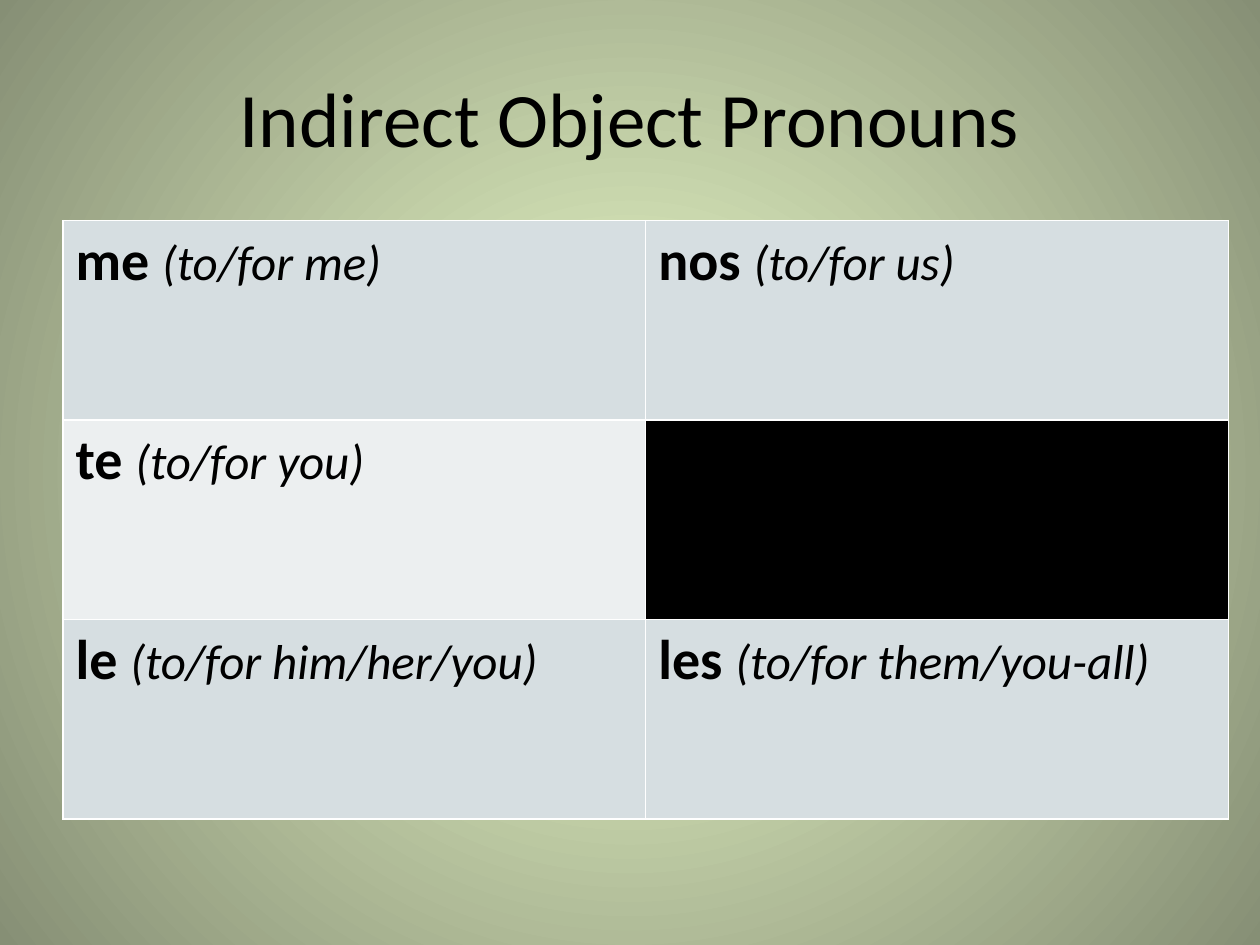
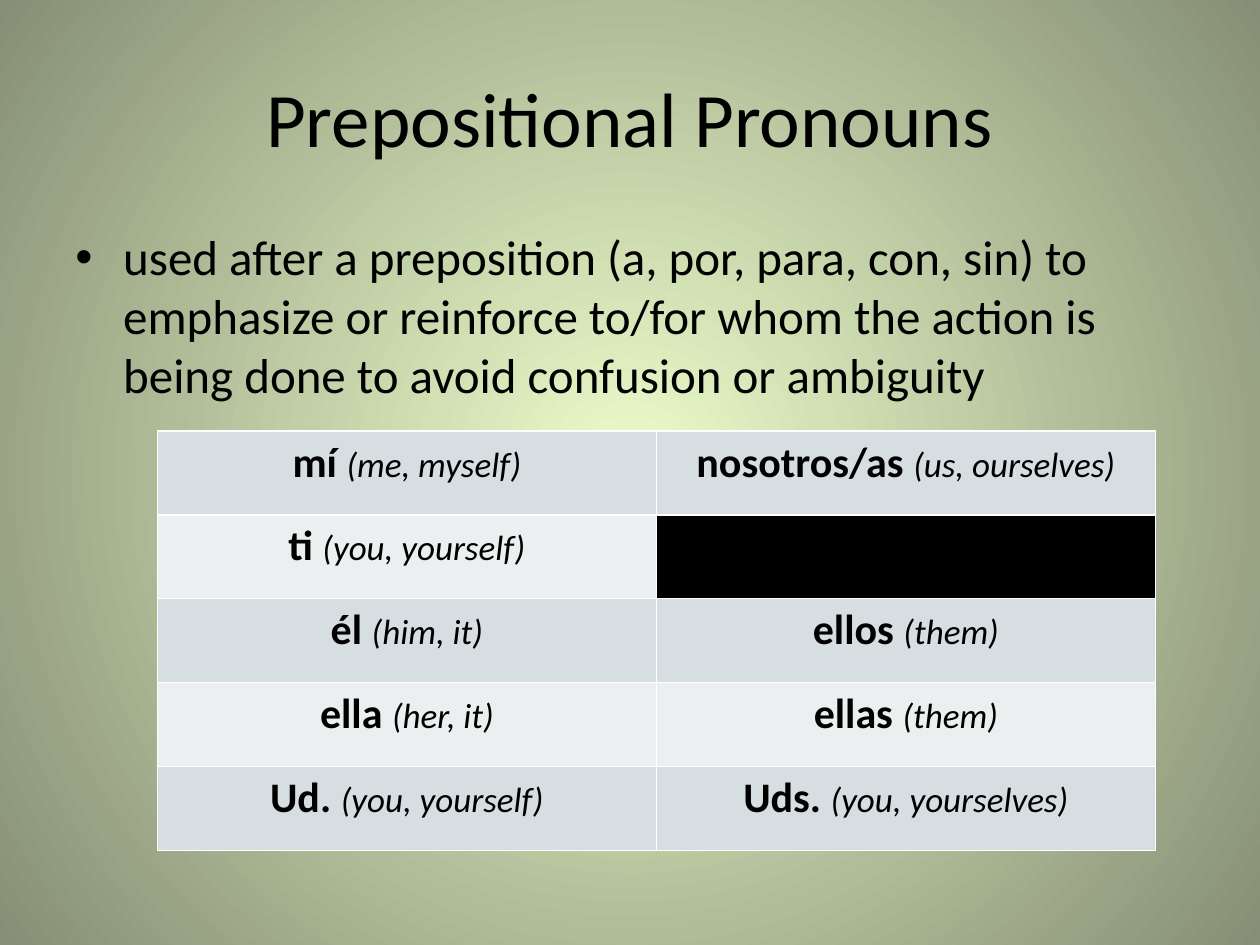
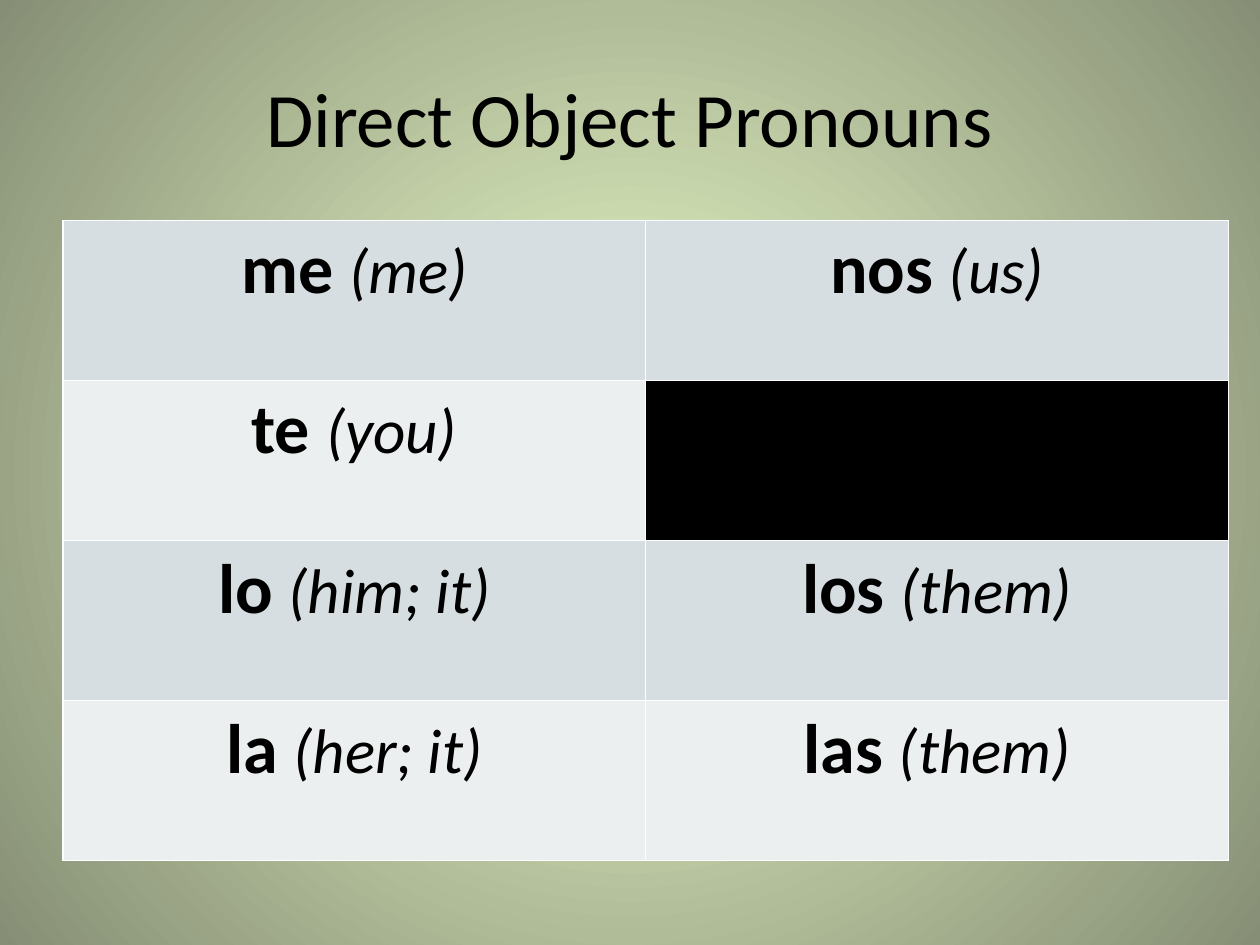
from dataclasses import dataclass

from lxml.etree import SubElement
from pptx import Presentation
from pptx.dml.color import RGBColor
from pptx.enum.text import MSO_ANCHOR as Anchor, PP_ALIGN as Align
from pptx.oxml.ns import qn
from pptx.util import Inches, Pt


@dataclass(frozen=True)
class Theme:
    font: str = "Calibri"
    text: str = "000000"
    glow: str = "ECFCCA"
    edge: str = "868F75"
    bands: tuple = ("D6DEE1", "ECEFF0")
    blocked: str = "000000"
    border: str = "FFFFFF"
    border_width: float = 1
    title_size: int = 44
    body_size: int = 28
    meaning_step: int = 4  # meanings are this much smaller than pronouns


THEME = Theme()
BLANK_LAYOUT = 6

# Each cell is (pronoun, meaning); None is a blocked-out cell
INDIRECT = [
    [("me", "to/for me"), ("nos", "to/for us")],
    [("te", "to/for you"), None],
    [("le", "to/for him/her/you"), ("les", "to/for them/you-all")],
]
PREPOSITIONAL = [
    [("mí", "me, myself"), ("nosotros/as", "us, ourselves")],
    [("ti", "you, yourself"), None],
    [("él", "him, it"), ("ellos", "them")],
    [("ella", "her, it"), ("ellas", "them")],
    [("Ud.", "you, yourself"), ("Uds.", "you, yourselves")],
]
DIRECT = [
    [("me", "me"), ("nos", "us")],
    [("te", "you"), None],
    [("lo", "him; it"), ("los", "them")],
    [("la", "her; it"), ("las", "them")],
]
USAGE = (
    "used after a preposition (a, por, para, con, sin) to emphasize or reinforce "
    "to/for whom the action is being done to avoid confusion or ambiguity"
)


def set_background(master):
    """Give every slide the radial gradient."""
    fill = master.background.fill
    fill.gradient()
    for stop, color in zip(fill.gradient_stops, (THEME.glow, THEME.edge)):
        stop.color.rgb = RGBColor.from_string(color)
    gradient = master.element.find(".//" + qn("a:gradFill"))
    gradient.remove(gradient.find(qn("a:lin")))
    circle = SubElement(gradient, qn("a:path"), path="circle")
    SubElement(circle, qn("a:fillToRect"), l="50000", t="50000", r="50000", b="50000")


def format_run(run, size, bold=False, italic=False):
    font = run.font
    font.name, font.size = THEME.font, Pt(size)
    font.bold, font.italic = bold, italic
    font.color.rgb = RGBColor.from_string(THEME.text)


def add_text(slide, text, box, size, anchor=Anchor.TOP):
    text_frame = slide.shapes.add_textbox(*map(Inches, box)).text_frame
    text_frame.word_wrap = True
    text_frame.vertical_anchor = anchor
    text_frame.text = text
    paragraph = text_frame.paragraphs[0]
    format_run(paragraph.runs[0], size)
    return paragraph


def add_titled_slide(presentation, title):
    slide = presentation.slides.add_slide(presentation.slide_layouts[BLANK_LAYOUT])
    paragraph = add_text(slide, title, (0.5, 0.3, 9, 1.25), THEME.title_size, Anchor.MIDDLE)
    paragraph.alignment = Align.CENTER
    return slide


def add_bullet(slide, text, box):
    paragraph = add_text(slide, text, box, THEME.body_size)
    paragraph.space_before = Pt(0.2 * THEME.body_size)
    properties = paragraph._p.get_or_add_pPr()
    indent = Inches(0.38)
    properties.set("marL", str(indent))
    properties.set("indent", str(-indent))
    SubElement(properties, qn("a:buFont"), typeface="Arial")
    SubElement(properties, qn("a:buChar"), char="•")


def set_borders(cell):
    properties = cell._tc.get_or_add_tcPr()
    for side in ("lnL", "lnR", "lnT", "lnB"):
        line = SubElement(properties, qn(f"a:{side}"), w=str(Pt(THEME.border_width)))
        SubElement(SubElement(line, qn("a:solidFill")), qn("a:srgbClr"), val=THEME.border)


def fill_cell(cell, entry, band, size, alignment):
    set_borders(cell)
    cell.fill.solid()
    cell.fill.fore_color.rgb = RGBColor.from_string(band if entry else THEME.blocked)
    if entry is None:
        return
    pronoun, meaning = entry
    paragraph = cell.text_frame.paragraphs[0]
    paragraph.text = f"{pronoun} "
    paragraph.alignment = alignment
    format_run(paragraph.runs[0], size, bold=True)
    run = paragraph.add_run()
    run.text = f"({meaning})"
    format_run(run, size - THEME.meaning_step, italic=True)


def add_pronoun_table(slide, entries, box, size, alignment=Align.CENTER):
    frame = slide.shapes.add_table(len(entries), len(entries[0]), *map(Inches, box))
    table = frame.table
    table.first_row = table.horz_banding = False
    for row, row_entries in enumerate(entries):
        band = THEME.bands[row % len(THEME.bands)]
        for column, entry in enumerate(row_entries):
            fill_cell(table.cell(row, column), entry, band, size, alignment)


def main():
    presentation = Presentation()
    presentation.slide_width, presentation.slide_height = Inches(10), Inches(7.5)
    set_background(presentation.slide_master)

    # Indirect objects
    slide = add_titled_slide(presentation, "Indirect Object Pronouns")
    add_pronoun_table(slide, INDIRECT, (0.5, 1.75, 9.25, 4.75), 32, Align.JUSTIFY)

    # Pronouns after a preposition
    slide = add_titled_slide(presentation, "Prepositional Pronouns")
    add_bullet(slide, USAGE, (0.5, 1.75, 9, 4.95))
    add_pronoun_table(slide, PREPOSITIONAL, (1.25, 3.42, 7.92, 3.33), 24)

    # Direct objects
    slide = add_titled_slide(presentation, "Direct Object Pronouns")
    add_pronoun_table(slide, DIRECT, (0.5, 1.75, 9.25, 5.08), 40)

    presentation.save("out.pptx")


if __name__ == "__main__":
    main()
